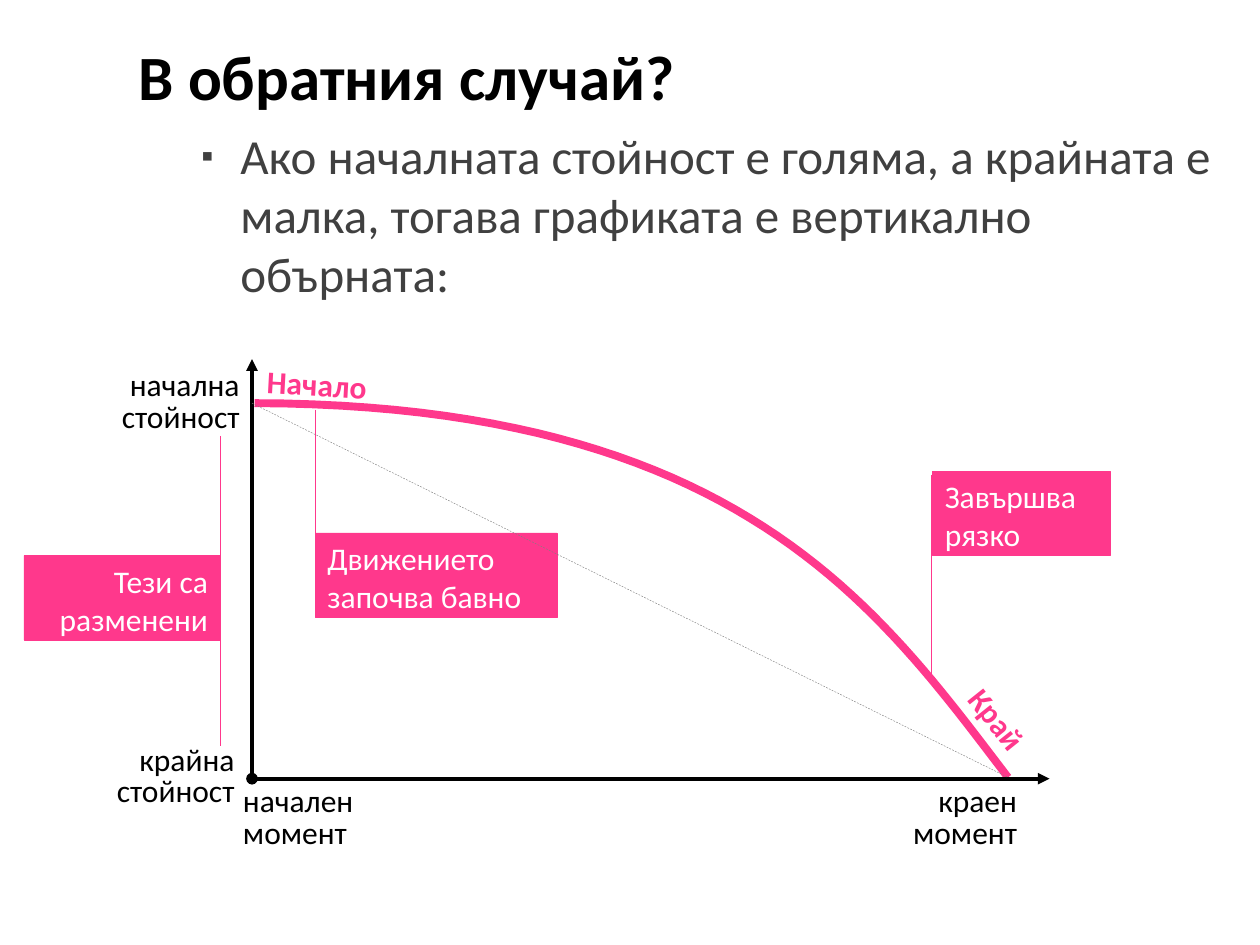
"""Build the slide about an easing curve that runs from a large value to a small one."""
from dataclasses import dataclass

from lxml import etree
from pptx import Presentation
from pptx.dml.color import RGBColor
from pptx.enum.dml import MSO_LINE
from pptx.enum.shapes import MSO_CONNECTOR, MSO_SHAPE
from pptx.enum.text import MSO_ANCHOR, MSO_AUTO_SIZE, PP_ALIGN
from pptx.oxml.ns import qn
from pptx.util import Emu, Pt

STRAIGHT = MSO_CONNECTOR.STRAIGHT
RECTANGLE = MSO_SHAPE.RECTANGLE
DASH = MSO_LINE.DASH
TOP, MIDDLE = MSO_ANCHOR.TOP, MSO_ANCHOR.MIDDLE
NO_FIT = MSO_AUTO_SIZE.NONE
LEFT, CENTER, RIGHT = PP_ALIGN.LEFT, PP_ALIGN.CENTER, PP_ALIGN.RIGHT

EMU_PER_PX = 9144
FONT = "Calibri"
PINK, BLACK, WHITE = "FF388C", "000000", "FFFFFF"
DARK_GRAY, GRAY = "404040", "808080"
CURVE = ((202, 320), (586, 321), (697, 482), (800, 617))
CURVE_STEPS = 48


@dataclass(frozen=True)
class Area:
    left: int
    top: int
    width: int
    height: int


@dataclass(frozen=True)
class Label:
    text: str
    area: Area
    align: PP_ALIGN = RIGHT
    color: str = BLACK
    bold: bool = False
    rotation: float = 0
    spacing: int | None = 18


@dataclass(frozen=True)
class Segment:
    start: tuple[int, int]
    end: tuple[int, int]
    color: str = BLACK
    width: float = 2.25
    dashed: bool = False
    head: str | None = None
    tail: str | None = None


@dataclass(frozen=True)
class Callout:
    text: str
    area: Area
    stem: Segment
    align: PP_ALIGN = LEFT


def stem(x: int, top: int, bottom: int) -> Segment:
    """Return the thin upright line of a callout."""
    return Segment((x, top), (x, bottom), PINK, 0.25)


START_LABEL = Label("Начало", Area(200, 279, 103, 51), CENTER, PINK, True, 3.1, None)
END_LABEL = Label("Край", Area(740, 545, 103, 51), CENTER, PINK, True, 51.5, None)
AXIS_LABELS = (
    Label("начален\nмомент", Area(183, 625, 125, 50), LEFT),
    Label("краен\nмомент", Area(692, 625, 125, 50)),
    Label("начална\nстойност", Area(75, 295, 125, 50)),
    Label("крайна\nстойност", Area(71, 592, 125, 50)),
)
AXES = (
    Segment((200, 618), (833, 618), tail="triangle"),
    Segment((200, 618), (200, 285), head="oval", tail="triangle"),
)
DIAGONAL = Segment((200, 320), (800, 617), GRAY, 0.25, dashed=True)
SLOW_START = Callout("Движението започва бавно", Area(250, 423, 192, 67), stem(250, 325, 490))
SHARP_END = Callout("Завършва рязко", Area(740, 374, 141, 67), stem(739, 377, 542))
SWAPPED = Callout("Тези са\vразменени", Area(19, 441, 156, 67), stem(175, 346, 592), RIGHT)


def px(value: float) -> Emu:
    """Turn px into EMU."""
    return Emu(round(value * EMU_PER_PX))


def rgb(color: str) -> RGBColor:
    """Turn a hex string into a colour."""
    return RGBColor.from_string(color)


def bounds(area: Area) -> tuple[Emu, Emu, Emu, Emu]:
    """Return an area in EMU."""
    return px(area.left), px(area.top), px(area.width), px(area.height)


def write(box, text: str, size: int, color: str, align=LEFT, bold=False, anchor=TOP, spacing=None) -> None:
    """Put formatted text in a shape."""
    frame = box.text_frame
    frame.text = text
    frame.word_wrap = True
    frame.auto_size = NO_FIT
    frame.vertical_anchor = anchor
    for paragraph in frame.paragraphs:
        paragraph.alignment = align
        if spacing:
            paragraph.line_spacing = Pt(spacing)
        font = paragraph.font
        font.name, font.size, font.bold = FONT, Pt(size), bold
        font.color.rgb = rgb(color)


def add_bullet(paragraph, char: str, color: str) -> None:
    """Give a paragraph a small square bullet and a hanging indent."""
    properties = paragraph._p.get_or_add_pPr()
    properties.set("marL", str(px(81)))
    properties.set("indent", str(px(-31)))
    bullet_color = etree.Element(qn("a:buClr"))
    etree.SubElement(bullet_color, qn("a:srgbClr"), val=color)
    parts = (
        bullet_color,
        etree.Element(qn("a:buSzPct"), val="70000"),
        etree.Element(qn("a:buFont"), typeface="Arial"),
        etree.Element(qn("a:buChar"), char=char),
    )
    for index, part in enumerate(parts):
        properties.insert(index, part)


def add_label(slide, label: Label) -> None:
    """Draw a text label."""
    box = slide.shapes.add_textbox(*bounds(label.area))
    box.rotation = label.rotation
    write(box, label.text, 18, label.color, label.align, label.bold, MIDDLE, label.spacing)


def add_segment(slide, segment: Segment) -> None:
    """Draw a straight line with optional ends."""
    points = (px(value) for value in segment.start + segment.end)
    connector = slide.shapes.add_connector(STRAIGHT, *points)
    line = connector.line
    line.color.rgb = rgb(segment.color)
    line.width = Pt(segment.width)
    if segment.dashed:
        line.dash_style = DASH
    properties = connector._element.spPr
    for tag, kind in (("a:headEnd", segment.head), ("a:tailEnd", segment.tail)):
        if kind:
            etree.SubElement(properties.find(qn("a:ln")), qn(tag), type=kind)
    etree.SubElement(properties, qn("a:effectLst"))


def add_callout(slide, callout: Callout) -> None:
    """Draw a filled box with its stem."""
    box = slide.shapes.add_shape(RECTANGLE, *bounds(callout.area))
    box.shadow.inherit = False
    box.fill.solid()
    box.fill.fore_color.rgb = rgb(PINK)
    box.line.color.rgb = rgb(PINK)
    box.line.width = Pt(0.25)
    write(box, callout.text, 18, WHITE, callout.align)
    add_segment(slide, callout.stem)


def curve_point(t: float) -> tuple[Emu, Emu]:
    """Return the point of the cubic curve at t."""
    weights = ((1 - t) ** 3, 3 * t * (1 - t) ** 2, 3 * t**2 * (1 - t), t**3)
    x, y = (sum(w * v for w, v in zip(weights, axis)) for axis in zip(*CURVE))
    return px(x), px(y)


def add_curve(slide) -> None:
    """Draw the easing curve."""
    start, *points = (curve_point(step / CURVE_STEPS) for step in range(CURVE_STEPS + 1))
    builder = slide.shapes.build_freeform(*start)
    builder.add_line_segments(points, close=False)
    curve = builder.convert_to_shape()
    curve.shadow.inherit = False
    curve.fill.background()
    curve.line.color.rgb = rgb(PINK)
    curve.line.width = Pt(4.5)


def main() -> None:
    """Build and save the deck."""
    deck = Presentation()
    deck.slide_width, deck.slide_height = px(1000), px(750)
    slide = deck.slides.add_slide(deck.slide_layouts[5])
    title = slide.shapes.title
    title.left, title.top, title.width, title.height = bounds(Area(100, 25, 892, 70))
    write(title, "В обратния случай?", 36, BLACK, bold=True)
    body = slide.shapes.add_textbox(*bounds(Area(100, 95, 892, 155)))
    write(body, "Ако началната стойност е голяма, а крайната е малка, "
                "тогава графиката е вертикално обърната:", 28, DARK_GRAY)
    add_bullet(body.text_frame.paragraphs[0], "▪", DARK_GRAY)
    add_label(slide, START_LABEL)
    add_callout(slide, SLOW_START)
    add_curve(slide)
    for segment in (*AXES, DIAGONAL):
        add_segment(slide, segment)
    for label in AXIS_LABELS:
        add_label(slide, label)
    add_callout(slide, SHARP_END)
    add_label(slide, END_LABEL)
    add_callout(slide, SWAPPED)
    deck.save("out.pptx")


if __name__ == "__main__":
    main()
